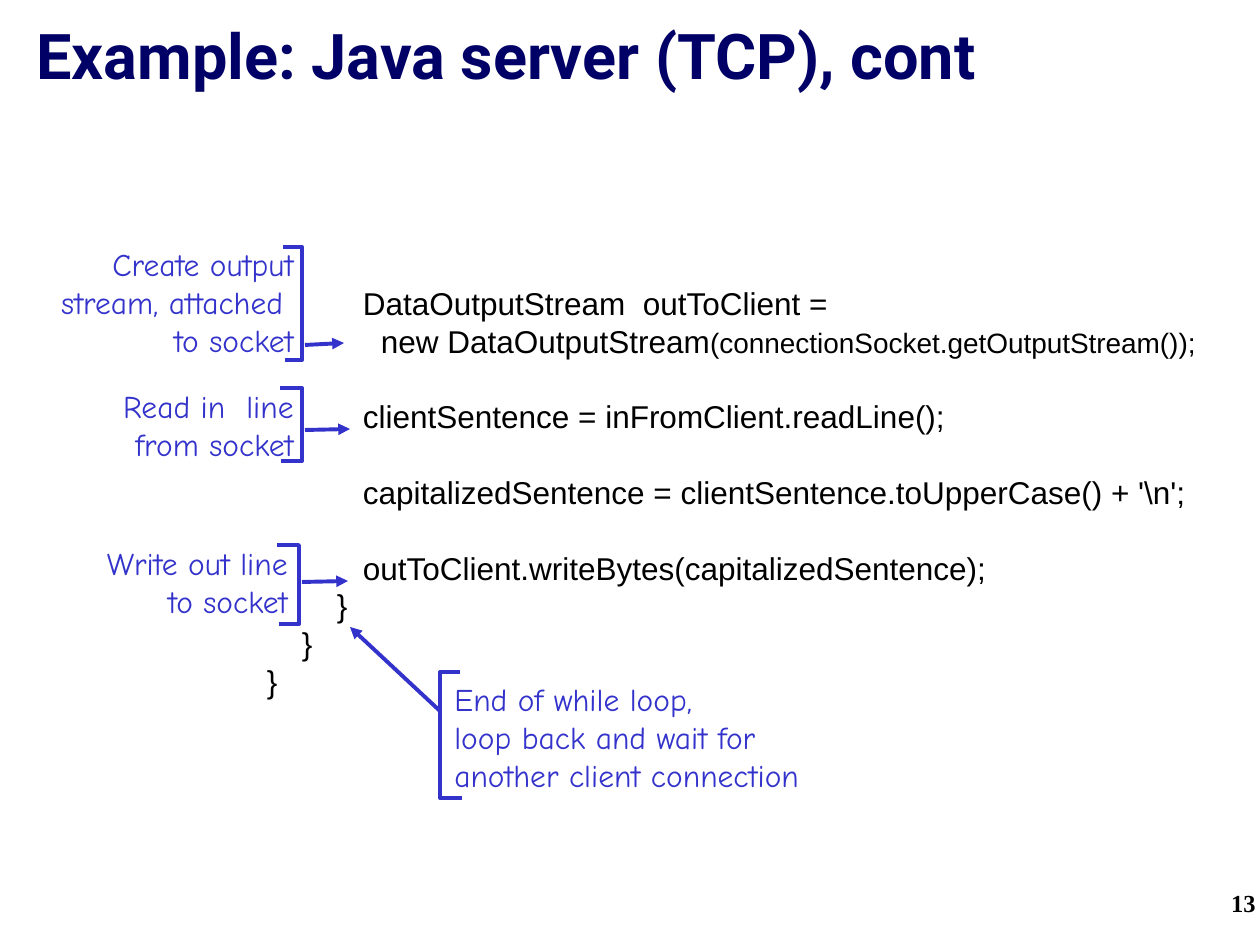
from dataclasses import dataclass

from lxml import etree
from pptx import Presentation
from pptx import util as u
from pptx.dml.color import RGBColor
from pptx.enum import shapes, text
from pptx.oxml.ns import qn

SCALE = 914400 / 126
INK, NAVY, BLUE = "000000", "000066", "3333CC"
LEFT, RIGHT = text.PP_ALIGN.LEFT, text.PP_ALIGN.RIGHT
LINE_PT = 21.6
INDENTS = {"method": 0, "try": 35, "while": 70, "body": 96, "nested": 114}


@dataclass
class Box:
    left: int
    top: int
    width: int
    height: int


@dataclass
class Note:
    words: str
    box: Box
    align: int
    bracket: list[tuple[int, int]]
    arrow: tuple[int, int, int, int]


@dataclass
class CodeLine:
    code: str
    level: str = "body"
    spaced: bool = False
    argument: str = ""


NOTES = [
    Note("Create output\nstream, attached \nto socket", Box(18, 239, 288, 126), RIGHT,
         [(283, 247), (302, 247), (302, 360), (285, 360)], (305, 345, 344, 343)),
    Note("Read in  line\nfrom socket", Box(18, 381, 288, 88), RIGHT,
         [(280, 388), (302, 388), (302, 461), (281, 461)], (305, 430, 350, 429)),
    Note("Write out line\nto socket", Box(18, 538, 282, 88), RIGHT,
         [(277, 545), (299, 545), (299, 624), (279, 624)], (302, 582, 348, 581)),
    Note("End of while loop,\nloop back and wait for\nanother client connection",
         Box(442, 674, 440, 126), LEFT,
         [(460, 672), (440, 672), (440, 798), (462, 798)], (440, 711, 350, 627)),
]

CODE = [
    CodeLine("DataOutputStream  outToClient ="),
    CodeLine("new DataOutputStream", "nested", argument="(connectionSocket.getOutputStream());"),
    CodeLine("clientSentence = inFromClient.readLine();", spaced=True),
    CodeLine("capitalizedSentence = clientSentence.toUpperCase() + '\\n';", spaced=True),
    CodeLine("outToClient.writeBytes(capitalizedSentence);", spaced=True),
    CodeLine("}", "while"),
    CodeLine("}", "try"),
    CodeLine("}", "method"),
]


def px(length: int) -> u.Emu:
    return u.Emu(round(length * SCALE))


def colour(value: str) -> RGBColor:
    return RGBColor.from_string(value)


def style(font, name: str, size: int, ink: str, bold: bool = False) -> None:
    font.name, font.size, font.bold = name, u.Pt(size), bold
    font.color.rgb = colour(ink)


def add_frame(slide, box: Box, anchor=text.MSO_ANCHOR.TOP):
    area = slide.shapes.add_textbox(px(box.left), px(box.top), px(box.width), px(box.height))
    frame = area.text_frame
    frame.word_wrap = True
    frame.vertical_anchor = anchor
    return frame


def add_label(slide, words: str, box: Box, font: str, size: int, ink: str, align=LEFT) -> None:
    frame = add_frame(slide, box)
    frame.text = words
    frame.paragraphs[0].alignment = align
    style(frame.paragraphs[0].runs[0].font, font, size, ink, True)


def add_code(slide, lines: list[CodeLine], box: Box) -> None:
    frame = add_frame(slide, box)
    frame.margin_left = frame.margin_right = frame.margin_top = frame.margin_bottom = 0
    frame.text = "\n".join(line.code for line in lines)
    for line, paragraph in zip(lines, frame.paragraphs):
        paragraph.line_spacing = u.Pt(LINE_PT)
        paragraph.space_before = u.Pt(LINE_PT if line.spaced else 0)
        properties = paragraph._p.get_or_add_pPr()
        properties.set("marL", str(px(INDENTS[line.level])))
        properties.set("indent", "0")
        style(paragraph.runs[0].font, "Arial", 18, INK)
        if line.argument:
            argument = paragraph.add_run()
            argument.text = line.argument
            style(argument.font, "Arial", 16, INK)


def draw_stroke(line) -> None:
    line.color.rgb = colour(BLUE)
    line.width = u.Pt(2.25)


def add_bracket(slide, points: list[tuple[int, int]]) -> None:
    builder = slide.shapes.build_freeform(*points[0], scale=SCALE)
    builder.add_line_segments(points[1:], close=False)
    bracket = builder.convert_to_shape()
    bracket.shadow.inherit = False
    bracket.fill.background()
    draw_stroke(bracket.line)


def add_arrow(slide, ends: tuple[int, int, int, int]) -> None:
    arrow = slide.shapes.add_connector(shapes.MSO_CONNECTOR.STRAIGHT, *map(px, ends))
    draw_stroke(arrow.line)
    etree.SubElement(arrow.line._get_or_add_ln(), qn("a:tailEnd"), type="triangle")
    etree.SubElement(arrow._element.spPr, qn("a:effectLst"))


def add_note(slide, note: Note) -> None:
    frame = add_frame(slide, note.box, text.MSO_ANCHOR.MIDDLE)
    frame.text = note.words
    for paragraph in frame.paragraphs:
        paragraph.alignment = note.align
        paragraph.line_spacing = u.Pt(LINE_PT)
        style(paragraph.runs[0].font, "Comic Neue", 18, BLUE)
    add_bracket(slide, note.bracket)
    add_arrow(slide, note.arrow)


def main() -> None:
    deck = Presentation()
    deck.slide_width, deck.slide_height = px(1260), px(945)
    slide = deck.slides.add_slide(deck.slide_layouts[6])
    add_label(slide, "13", Box(869, 882, 399, 63), "Times New Roman", 14, INK, RIGHT)
    add_label(slide, "Example: Java server (TCP), cont", Box(24, 10, 1223, 126),
              "Roboto", 36, NAVY)
    add_code(slide, CODE, Box(267, 284, 985, 420))
    for note in NOTES:
        add_note(slide, note)
    deck.save("out.pptx")


if __name__ == "__main__":
    main()
